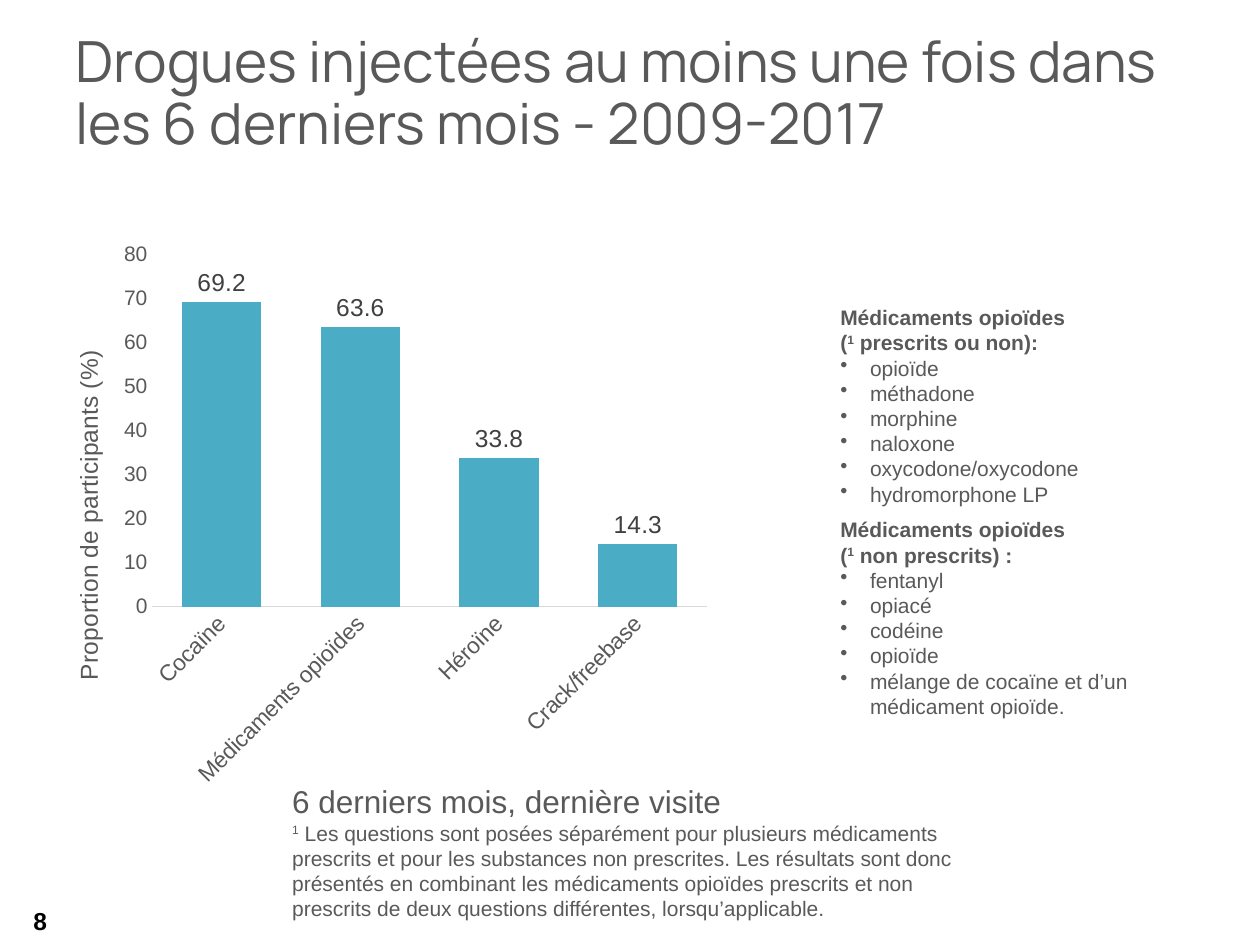
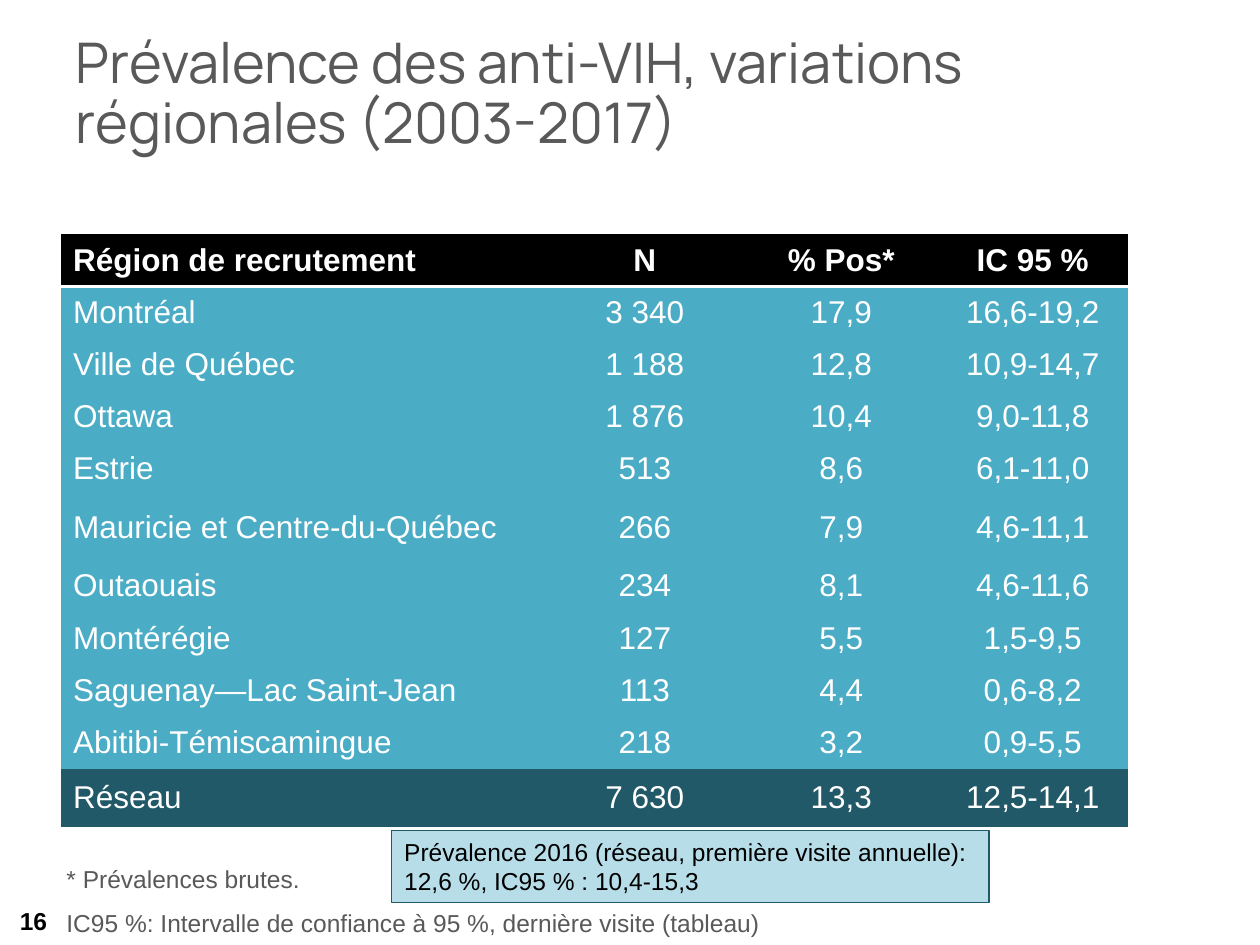
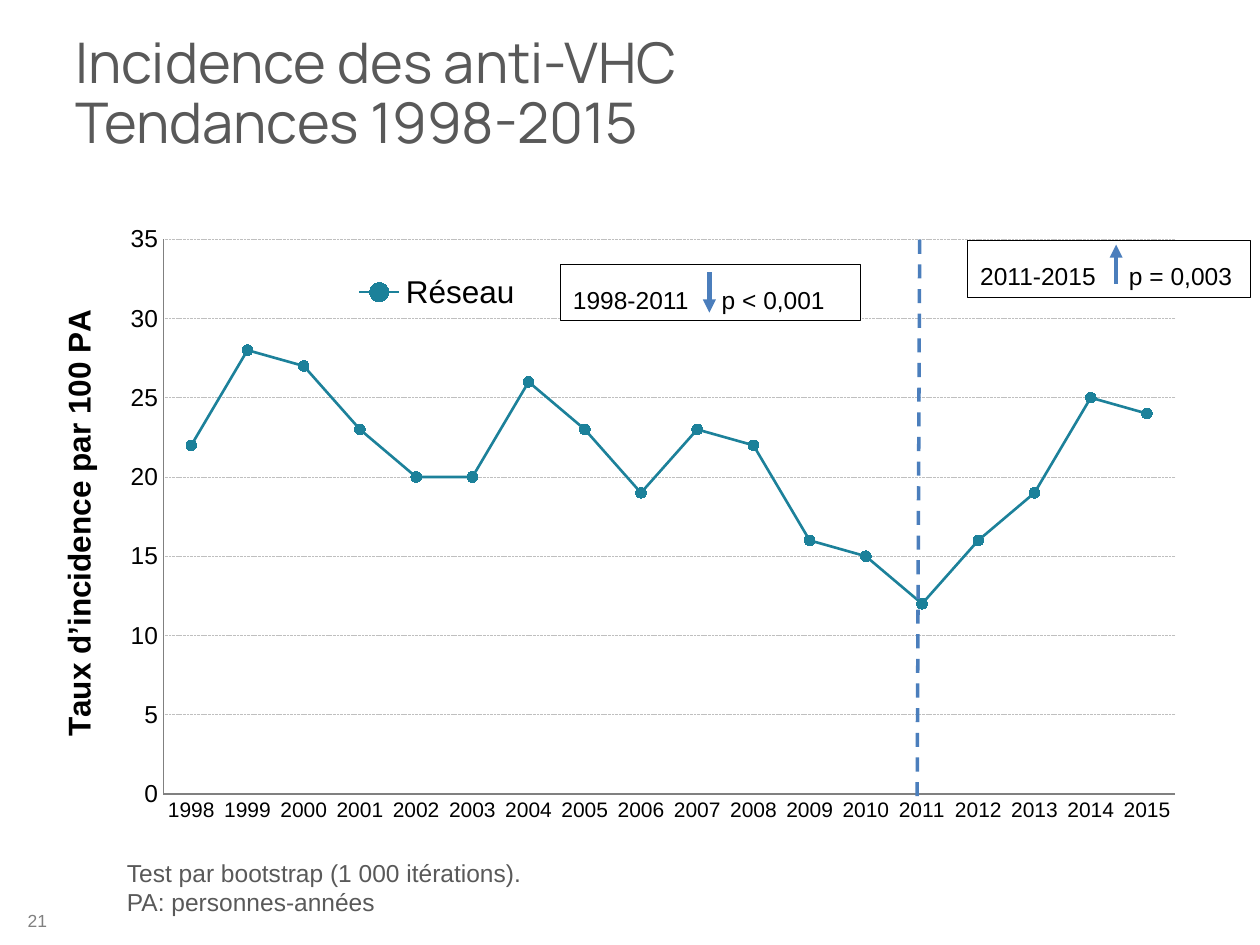
"""Build three slides on drug use, HIV prevalence and HCV incidence."""
from lxml import etree
from pptx import Presentation
from pptx.chart.data import CategoryChartData
from pptx.dml.color import RGBColor
from pptx.enum import chart as charts, dml, shapes, text
from pptx.oxml import parse_xml
from pptx.oxml.ns import nsdecls, qn
from pptx.util import Cm, Pt

COLOURS = {name: RGBColor.from_string(value) for name, value in {
    "grey": "595959", "black": "000000", "white": "FFFFFF", "teal": "4BACC6",
    "dark teal": "215968", "pale teal": "B7DEE8", "line teal": "1C819A",
    "blue": "4B7EBC", "label": "404040", "number": "808080",
    "axis": "D9D9D9", "grid": "BFBFBF"}.items()}


def write(para, words, size, colour="grey", bold=False, raised=False, face="Arial"):
    span = para.add_run()
    span.text = words
    span.font.name = face
    span.font.size = Pt(size)
    span.font.bold = bold
    span.font.color.rgb = COLOURS[colour]
    if raised:
        span._r.get_or_add_rPr().set("baseline", "30000")


def add_box(page, left, top, width, height, fill=None, line=None, weight=0.5):
    place = Cm(left), Cm(top), Cm(width), Cm(height)
    if fill:
        box = page.shapes.add_shape(shapes.MSO_SHAPE.RECTANGLE, *place)
        box.shadow.inherit = False
        box.fill.solid()
        box.fill.fore_color.rgb = COLOURS[fill]
        box.line.color.rgb = COLOURS[line]
        box.line.width = Pt(weight)
    else:
        box = page.shapes.add_textbox(*place)
    box.text_frame.word_wrap = True
    box.text_frame.vertical_anchor = text.MSO_ANCHOR.TOP
    box.text_frame.paragraphs[0].alignment = text.PP_ALIGN.LEFT
    return box


deck = Presentation()
deck.slide_width, deck.slide_height = Cm(25.4), Cm(19.05)

pages = []
for lines, title_size, number, size, colour, bold in [
    (["Drogues injectées au moins une fois dans les 6 derniers mois - 2009-2017"],
     32.4, "8", 14, "black", True),
    (["Prévalence des anti-VIH, variations régionales (2003-2017)"],
     32, "16", 14, "black", True),
    (["Incidence des anti-VHC", "Tendances 1998-2015"],
     32, "21", 10, "number", False),
]:
    page = deck.slides.add_slide(deck.slide_layouts[5])
    title = page.shapes.title
    title.left, title.top, title.width, title.height = Cm(1.27), Cm(0.33), Cm(22.86), Cm(3.18)
    title.text_frame.auto_size = text.MSO_AUTO_SIZE.NONE
    title.text_frame.vertical_anchor = text.MSO_ANCHOR.MIDDLE
    para = title.text_frame.paragraphs[0]
    para.alignment = text.PP_ALIGN.LEFT
    para.line_spacing = 0.9
    for index, line in enumerate(lines):
        if index:
            para.add_line_break()
        write(para, line, title_size, face="Manrope")
    box = add_box(page, 0, 18.07, 1.2, 0.98)
    box.text_frame.vertical_anchor = text.MSO_ANCHOR.MIDDLE
    box.text_frame.paragraphs[0].alignment = text.PP_ALIGN.RIGHT
    write(box.text_frame.paragraphs[0], number, size, colour, bold)
    pages.append(page)
drugs_page, regions_page, trend_page = pages

drugs = CategoryChartData()
drugs.categories = ["Cocaïne", "Médicaments opioïdes", "Héroïne", "Crack/freebase"]
drugs.add_series("Series 1", [69.2, 63.6, 33.8, 14.3])
rates = CategoryChartData()
rates.categories = [str(year) for year in range(1998, 2016)]
rates.add_series("Réseau", [22, 28, 27, 23, 20, 20, 26, 23, 19, 23, 22, 16, 15, 12, 16, 19, 25, 24])

graphs = []
for page, kind, place, data, heading, title_size, bold, sizes, colour, top_value, step, plot_place in [
    (drugs_page, charts.XL_CHART_TYPE.COLUMN_CLUSTERED, (0.89, 4.67, 13.64, 11.46), drugs,
     "Proportion de participants (%)", 14, False, (13, 12), "grey", 80, 10,
     (0.16, 0.04, 0.82, 0.62)),
    (trend_page, charts.XL_CHART_TYPE.LINE_MARKERS, (0.89, 4.32, 24, 12.57), rates,
     "Taux d’incidence par 100 PA", 18, True, (12, 14), "black", 35, 5,
     (0.1, 0.04, 0.85, 0.89)),
]:
    graph = page.shapes.add_chart(kind, *map(Cm, place), data).chart
    graph.has_title = False
    graph.has_legend = page is trend_page
    graph.font.name = "Arial"
    graph.font.size = Pt(18)
    graph.plots[0].vary_by_categories = False
    axis = graph.value_axis
    axis.minimum_scale, axis.maximum_scale, axis.major_unit = 0, top_value, step
    axis.has_major_gridlines = page is trend_page
    axis.tick_labels.number_format = "0"
    axis.tick_labels.number_format_is_linked = False
    write(axis.axis_title.text_frame.paragraphs[0], heading, title_size, colour, bold)
    graph.element.find(".//" + qn("c:title")).find(".//" + qn("a:bodyPr")).set("rot", "-5400000")
    for axis, size in zip((graph.category_axis, graph.value_axis), sizes):
        axis.major_tick_mark = axis.minor_tick_mark = charts.XL_TICK_MARK.NONE
        axis.tick_labels.font.name = "Arial"
        axis.tick_labels.font.size = Pt(size)
        axis.tick_labels.font.color.rgb = COLOURS[colour]
        axis.format.line.color.rgb = COLOURS["axis" if page is drugs_page else "number"]
        axis.format.line.width = Pt(0.75)
    layouts = [("c:plotArea", plot_place)]
    if graph.has_legend:
        graph.legend.position = charts.XL_LEGEND_POSITION.RIGHT
        graph.legend.include_in_layout = False
        graph.legend.font.name = "Arial"
        graph.legend.font.size = Pt(18)
        layouts.append(("c:legend", (0.26, 0.09, 0.14, 0.07)))
    for tag, numbers in layouts:
        holder = graph.element.find(".//" + qn(tag))
        for stale in holder.findall(qn("c:layout")):
            holder.remove(stale)
        target = '<c:layoutTarget val="inner"/>' if tag == "c:plotArea" else ""
        modes = "".join(f'<c:{side}Mode val="edge"/>' for side in "xy")
        spans = "".join(f'<c:{side} val="{value}"/>' for side, value in zip("xywh", numbers))
        layout = parse_xml(f'<c:layout {nsdecls("c")}><c:manualLayout>{target}{modes}{spans}'
                           "</c:manualLayout></c:layout>")
        holder.insert(0 if target else 1, layout)
    graphs.append(graph)
drug_graph, trend_graph = graphs

drug_graph.value_axis.format.line.fill.background()
labels_frame = drug_graph.element.find(".//" + qn("c:catAx")).find(qn("c:txPr"))
labels_frame.find(qn("a:bodyPr")).set("rot", "-2700000")
bars = drug_graph.plots[0]
bars.gap_width = 75
bars.series[0].format.fill.solid()
bars.series[0].format.fill.fore_color.rgb = COLOURS["teal"]
bars.has_data_labels = True
labels = bars.data_labels
labels.show_value = True
labels.number_format, labels.number_format_is_linked = "0.0", False
labels.position = charts.XL_LABEL_POSITION.OUTSIDE_END
labels.font.name, labels.font.size = "Arial", Pt(14)
labels.font.color.rgb = COLOURS["label"]

note = add_box(drugs_page, 5.64, 15.65, 14.1, 3.07).text_frame
write(note.paragraphs[0], "6 derniers mois, dernière visite", 18)
para = note.add_paragraph()
write(para, "1", 12, raised=True)
write(para, " Les questions sont posées séparément pour plusieurs médicaments prescrits et pour "
      "les substances non prescrites. Les résultats sont donc présentés en combinant les "
      "médicaments opioïdes prescrits et non prescrits de deux questions différentes, "
      "lorsqu’applicable.", 12)

lists = add_box(drugs_page, 16.69, 6.02, 7.8, 8.69).text_frame
para = lists.paragraphs[0]
for ending, medicines in [
    (" prescrits ou non):", ["opioïde", "méthadone", "morphine", "naloxone",
                             "oxycodone/oxycodone", "hydromorphone LP"]),
    (" non prescrits) :", ["fentanyl", "opiacé", "codéine", "opioïde",
                           "mélange de cocaïne et d’un médicament opioïde."]),
]:
    if para is None:
        para.space_after = Pt(6)
        para = lists.add_paragraph()
    write(para, "Médicaments opioïdes", 12, bold=True)
    para = lists.add_paragraph()
    write(para, "(", 12, bold=True)
    write(para, "1", 12, bold=True, raised=True)
    write(para, ending, 12, bold=True)
    for medicine in medicines:
        para = lists.add_paragraph()
        properties = para._p.get_or_add_pPr()
        properties.set("marL", str(Cm(0.6)))
        properties.set("indent", str(-Cm(0.6)))
        etree.SubElement(properties, qn("a:buChar")).set("char", "•")
        write(para, medicine, 12)
    if medicine == "hydromorphone LP":
        para.space_after = Pt(6)
        para = lists.add_paragraph()

rows = [
    ("Région de recrutement", "N", "% Pos*", "IC 95 %"),
    ("Montréal", "3 340", "17,9", "16,6-19,2"),
    ("Ville de Québec", "1 188", "12,8", "10,9-14,7"),
    ("Ottawa", "1 876", "10,4", "9,0-11,8"),
    ("Estrie", "513", "8,6", "6,1-11,0"),
    ("Mauricie et Centre-du-Québec", "266", "7,9", "4,6-11,1"),
    ("Outaouais", "234", "8,1", "4,6-11,6"),
    ("Montérégie", "127", "5,5", "1,5-9,5"),
    ("Saguenay—Lac Saint-Jean", "113", "4,4", "0,6-8,2"),
    ("Abitibi-Témiscamingue", "218", "3,2", "0,9-5,5"),
    ("Réseau", "7 630", "13,3", "12,5-14,1"),
]
row_heights = [1.05] * 5 + [1.31, 1.06, 1.06, 1.05, 1.05, 1.17]
frame = regions_page.shapes.add_table(len(rows), 4, Cm(1.22), Cm(4.72), Cm(21.52), Cm(11.9))
frame.element.find(".//" + qn("a:tableStyleId")).text = "{2D5ABB26-0587-4C30-8999-92F81FD0307C}"
table = frame.table
table.horz_banding = False
for column, width in zip(table.columns, (9.75, 4.06, 3.86, 3.86)):
    column.width = Cm(width)
for row_index, (row, height) in enumerate(zip(rows, row_heights)):
    table.rows[row_index].height = Cm(height)
    header = row_index == 0
    fill = {0: "black", len(rows) - 1: "dark teal"}.get(row_index, "teal")
    for column_index, words in enumerate(row):
        cell = table.cell(row_index, column_index)
        cell.vertical_anchor = text.MSO_ANCHOR.MIDDLE
        cell.fill.solid()
        cell.fill.fore_color.rgb = COLOURS[fill]
        para = cell.text_frame.paragraphs[0]
        para.alignment = text.PP_ALIGN.CENTER if column_index else text.PP_ALIGN.LEFT
        write(para, words, 18, "white", header)
        if header:
            border = parse_xml(f'<a:lnB {nsdecls("a")} w="{Pt(2)}"><a:solidFill>'
                               f'<a:srgbClr val="{COLOURS["white"]}"/></a:solidFill></a:lnB>')
            cell._tc.get_or_add_tcPr().insert(0, border)

notes = add_box(regions_page, 1.09, 17.3, 18.64, 1.75).text_frame
write(notes.paragraphs[0], "* Prévalences brutes.", 14)
para = notes.add_paragraph()
para.space_before = Pt(8)
write(para, "IC95 %: Intervalle de confiance à 95 %, dernière visite (tableau)", 14)

callout = add_box(regions_page, 7.9, 16.74, 12.04, 1.45, "pale teal", "dark teal", 0.75).text_frame
callout.word_wrap = False
write(callout.paragraphs[0], "Prévalence 2016 (réseau, première visite annuelle):", 14, "black")
para = callout.add_paragraph()
para.alignment = text.PP_ALIGN.LEFT
write(para, "12,6 %, IC95 % : 10,4-15,3", 14, "black")

network = trend_graph.plots[0].series[0]
network.smooth = False
network.format.line.color.rgb = COLOURS["line teal"]
network.format.line.width = Pt(1.5)
network.marker.style = charts.XL_MARKER_STYLE.CIRCLE
network.marker.size = 6
network.marker.format.fill.solid()
network.marker.format.fill.fore_color.rgb = COLOURS["line teal"]
network.marker.format.line.color.rgb = COLOURS["line teal"]
grid = trend_graph.value_axis.major_gridlines.format.line
grid.color.rgb = COLOURS["grid"]
grid.width = Pt(0.5)
grid.dash_style = dml.MSO_LINE.SQUARE_DOT

method = add_box(trend_page, 2.31, 17.17, 9.19, 1.45).text_frame
write(method.paragraphs[0], "Test par bootstrap (1 000 itérations).", 14)
write(method.add_paragraph(), "PA: personnes-années", 14)

for period, p_value, left, top, width in [
    ("1998-2011", "p < 0,001", 11.3, 5.33, 6.05),
    ("2011-2015", "p = 0,003", 19.51, 4.85, 5.69),
]:
    box = add_box(trend_page, left, top, width, 1.14, "white", "black")
    para = box.text_frame.paragraphs[0]
    para.line_spacing = 1.5
    tabs = etree.SubElement(para._p.get_or_add_pPr(), qn("a:tabLst"))
    etree.SubElement(tabs, qn("a:tab"), pos=str(Cm(3)), algn="l")
    write(para, f"{period}\t{p_value}", 14, "black")

for start_x, start_y, end_x, end_y, weight, arrow in [
    (18.49, 16.05, 18.54, 4.75, 2, False),
    (14.3, 5.49, 14.3, 6.3, 2.5, True),
    (22.5, 5.72, 22.5, 4.93, 2.5, True),
]:
    connector = trend_page.shapes.add_connector(
        shapes.MSO_CONNECTOR.STRAIGHT, Cm(start_x), Cm(start_y), Cm(end_x), Cm(end_y))
    connector.line.color.rgb = COLOURS["blue"]
    connector.line.width = Pt(weight)
    if arrow:
        outline = connector.element.find(".//" + qn("a:ln"))
        etree.SubElement(outline, qn("a:tailEnd")).set("type", "triangle")
    else:
        connector.line.dash_style = dml.MSO_LINE.DASH
    etree.SubElement(connector.element.spPr, qn("a:effectLst"))

deck.save("out.pptx")
